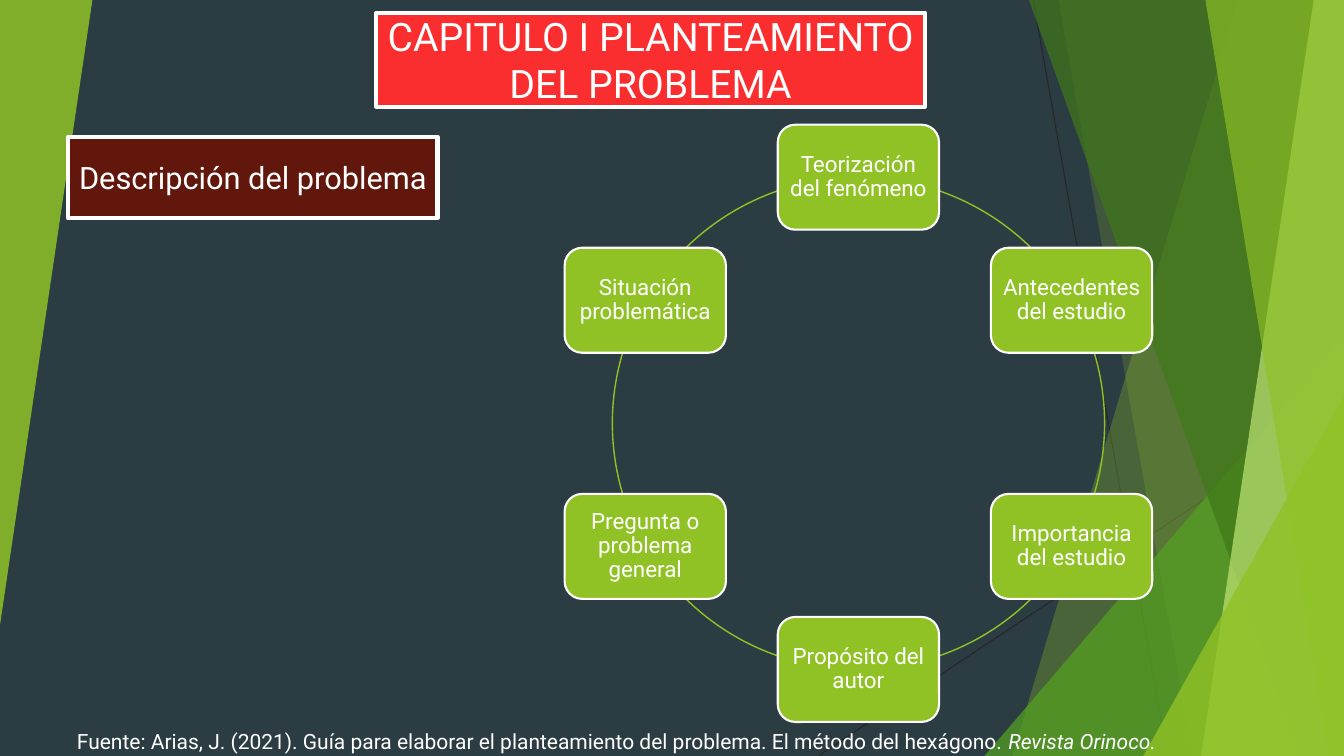
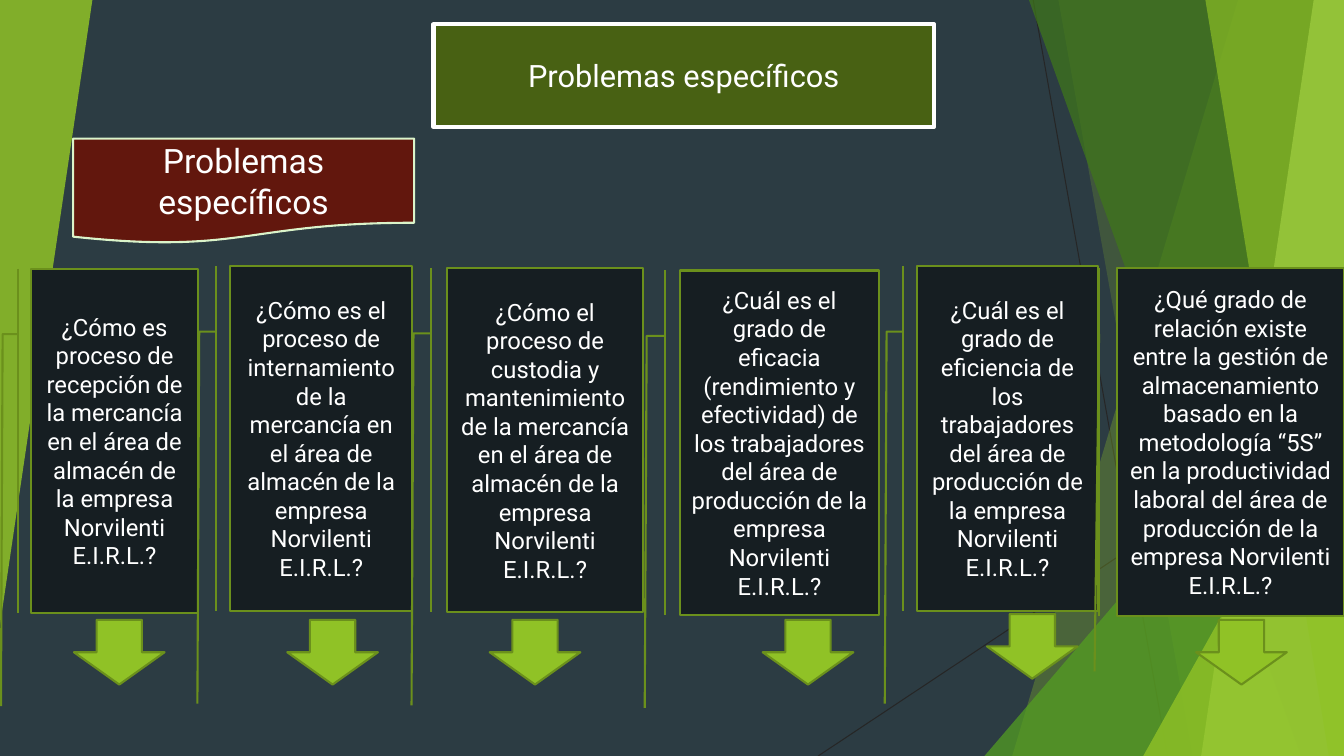
import dataclasses
import math

import lxml.etree
import pptx
import pptx.dml.color
import pptx.enum.shapes
import pptx.enum.text
import pptx.oxml.ns
import pptx.util

SHAPE = pptx.enum.shapes.MSO_SHAPE
COLUMNS, ROWS = 160, 90
CELL = pptx.util.Inches(1) // 12
TITLE_ONLY = 5
COMPANY = "Norvilenti E.I.R.L."


@dataclasses.dataclass(frozen=True)
class Theme:
    font: str = "Roboto"
    background: str = "2C3C43"
    white: str = "FFFFFF"
    lime: str = "90C226"
    green: str = "54A021"
    forest: str = "3F7819"
    pale_lime: str = "C0E474"
    hairline: str = "262626"
    red: str = "FA2E2E"
    maroon: str = "62170D"
    olive: str = "486113"
    mint: str = "DBF4CA"
    night: str = "161E22"
    moss: str = "6B901C"
    chapter_size: int = 28
    banner_size: int = 24
    heading_size: int = 22
    question_size: int = 17
    node_size: int = 16
    source_size: int = 15


THEME = Theme()


def cells(*counts):
    return [round(count * CELL) for count in counts]


def color(code):
    return pptx.dml.color.RGBColor.from_string(code)


def write(shape, *runs, size, spacing=None, margin=None, wrap=True):
    """Fill a shape with one centred paragraph; a run is (text, italic)."""
    frame = shape.text_frame
    frame.word_wrap = wrap
    frame.auto_size = pptx.enum.text.MSO_AUTO_SIZE.NONE
    frame.vertical_anchor = pptx.enum.text.MSO_ANCHOR.MIDDLE
    if margin is not None:
        frame.margin_left = frame.margin_right = pptx.util.Inches(margin)
        frame.margin_top = frame.margin_bottom = pptx.util.Inches(margin)
    para = frame.paragraphs[0]
    para.alignment = pptx.enum.text.PP_ALIGN.CENTER
    if spacing:
        para.line_spacing = spacing
    for text, italic in runs:
        span = para.add_run()
        span.text = text
        span.font.name = THEME.font
        span.font.size = pptx.util.Pt(size)
        span.font.italic = italic
        span.font.color.rgb = color(THEME.white)


class SlideMaker:
    """Draws on the current slide; lengths are counted in grid cells."""

    def __init__(self):
        self.deck = pptx.Presentation()
        self.deck.slide_width, self.deck.slide_height = cells(COLUMNS, ROWS)
        self.layout = self.deck.slide_layouts[TITLE_ONLY]
        background = self.deck.slide_master.background.fill
        background.solid()
        background.fore_color.rgb = color(THEME.background)
        self.slide = None

    def new_slide(self):
        self.slide = self.deck.slides.add_slide(self.layout)

    def paint(self, shape, fill=None, line=None, width=1.5, opacity=None):
        shape.shadow.inherit = False
        if fill:
            shape.fill.solid()
            shape.fill.fore_color.rgb = color(fill)
        else:
            shape.fill.background()
        if opacity:
            tint = shape.element.find(".//" + pptx.oxml.ns.qn("a:srgbClr"))
            alpha = lxml.etree.SubElement(tint, pptx.oxml.ns.qn("a:alpha"))
            alpha.set("val", str(opacity * 1000))
        if line:
            shape.line.color.rgb = color(line)
            shape.line.width = pptx.util.Pt(width)
        else:
            shape.line.fill.background()
        return shape

    def title(self, text, place, fill, size):
        title = self.slide.shapes.title
        title.left, title.top, title.width, title.height = cells(*place)
        self.paint(title, fill, THEME.white, width=3)
        write(title, (text, False), size=size)

    def shape(self, kind, place, **look):
        return self.paint(self.slide.shapes.add_shape(kind, *cells(*place)), **look)

    def triangle(self, place, fill, opacity, rotation=0):
        triangle = self.shape(SHAPE.ISOSCELES_TRIANGLE, place, fill=fill, opacity=opacity)
        triangle.adjustments[0] = 1
        triangle.rotation = rotation
        return triangle

    def shard(self, top, bottom, fill, opacity):
        """Draw a band from two left corners to the right slide edge."""
        builder = self.slide.shapes.build_freeform(*cells(top, 0))
        corners = [(COLUMNS, 0), (COLUMNS, ROWS), (bottom, ROWS)]
        builder.add_line_segments([cells(*corner) for corner in corners], close=True)
        return self.paint(builder.convert_to_shape(), fill, opacity=opacity)

    def hairline(self, *ends):
        line = self.slide.shapes.add_connector(
            pptx.enum.shapes.MSO_CONNECTOR.STRAIGHT, *cells(*ends))
        line.line.color.rgb = color(THEME.hairline)
        line.line.width = pptx.util.Pt(0.75)
        properties = line.element.find(pptx.oxml.ns.qn("p:spPr"))
        lxml.etree.SubElement(properties, pptx.oxml.ns.qn("a:effectLst"))
        return line

    def caption(self, place, *runs, size):
        box = self.slide.shapes.add_textbox(*cells(*place))
        write(box, *runs, size=size, wrap=False)

    def cycle(self, labels, center, radius, size):
        """Place labelled boxes clockwise from the top of a ring."""
        (x, y), (width, height) = center, size
        self.shape(SHAPE.OVAL, (x - radius, y - radius, 2 * radius, 2 * radius),
                   line=THEME.lime, width=1)
        for index, label in enumerate(labels):
            angle = math.tau * index / len(labels)
            left = x + radius * math.sin(angle) - width / 2
            top = y - radius * math.cos(angle) - height / 2
            node = self.shape(SHAPE.ROUNDED_RECTANGLE, (left, top, width, height),
                              fill=THEME.lime, line=THEME.white)
            write(node, (label, False), size=THEME.node_size, spacing=0.9, margin=0.04)

    def callout(self, text, place, leader):
        callout = self.shape(SHAPE.LINE_CALLOUT_2_BORDER_AND_ACCENT_BAR, place,
                             fill=THEME.night, line=THEME.moss)
        for index, value in enumerate(leader):
            callout.adjustments[index] = value
        write(callout, (text, False), size=THEME.question_size)

    def backdrop(self):
        """Draw the shared decoration and move it to the layout."""
        pieces = [
            self.hairline(123, 0, 139, ROWS),
            self.hairline(COLUMNS, 48.4, 97.4, ROWS),
            self.shard(147.4, 120.5, THEME.lime, 30),
            self.shard(126, 142, THEME.lime, 20),
            self.triangle((117.2, 40, 42.8, 50), THEME.green, 72),
            self.shard(122.5, 154.9, THEME.forest, 70),
            self.shard(156.4, 143, THEME.pale_lime, 70),
            self.shard(143.5, 158.2, THEME.lime, 65),
            self.triangle((136.1, 47.2, 23.9, 42.8), THEME.lime, 80),
            self.triangle((0, 0, 11, 74.4), THEME.lime, 85, rotation=180),
        ]
        for index, piece in enumerate(pieces):
            piece.element.xpath(".//p:cNvPr")[0].set("id", str(100 + index))
            self.layout.shapes.element.insert(2 + index, piece.element)


def problem_statement(maker):
    maker.title("CAPITULO I PLANTEAMIENTO DEL PROBLEMA", (44.8, 1.5, 65.3, 11.2),
                THEME.red, THEME.chapter_size)
    heading = maker.shape(SHAPE.RECTANGLE, (8.1, 16.3, 44, 9.7),
                          fill=THEME.maroon, line=THEME.white, width=3)
    write(heading, ("Descripción del problema", False), size=THEME.heading_size)
    maker.cycle(
        ["Teorización del fenómeno", "Antecedentes del estudio",
         "Importancia del estudio", "Propósito del autor",
         "Pregunta o problema general", "Situación problemática"],
        center=(102.2, 50.4), radius=29.3, size=(19.2, 12.5))
    maker.caption(
        (4.5, 86.1, 137.8, 4.2),
        ("Fuente: Arias, J. (2021). Guía para elaborar el planteamiento del problema. "
         "El método del hexágono. ", False),
        ("Revista Orinoco.", True), size=THEME.source_size)


def specific_problems(maker):
    maker.title("Problemas específicos", (51.6, 2.9, 59.6, 12.2),
                THEME.olive, THEME.heading_size)
    banner = maker.shape(SHAPE.FLOWCHART_DOCUMENT, (8.7, 16.5, 40.6, 12.5),
                         fill=THEME.maroon, line=THEME.mint)
    write(banner, ("Problemas específicos", False), size=THEME.banner_size)

    store = f"en el área de almacén de la empresa {COMPANY}?"
    plant = f"del área de producción de la empresa {COMPANY}?"
    wide_leader = (0.19, -0.08, 0.19, -0.17, 1.27, -0.18)
    narrow_leader = (0.19, -0.08, 0.19, -0.08, 1.16, -0.1)
    # question, callout place, leader, arrow left, arrow top
    questions = [
        (f"¿Cómo es proceso de recepción de la mercancía {store}",
         (3.7, 32, 19.9, 41), wide_leader, 8.8, 73.8),
        (f"¿Cómo es el proceso de internamiento de la mercancía {store}",
         (27.4, 31.7, 21.7, 41), wide_leader, 34.2, 73.8),
        (f"¿Cómo el proceso de custodia y mantenimiento de la mercancía {store}",
         (53.2, 31.9, 23.4, 41), wide_leader, 58.3, 73.8),
        ("¿Cuál es el grado de eficacia (rendimiento y efectividad) "
         f"de los trabajadores {plant}",
         (81, 32.2, 23.6, 41), wide_leader, 90.8, 73.8),
        (f"¿Cuál es el grado de eficiencia de los trabajadores {plant}",
         (109.2, 31.7, 21.5, 41), wide_leader, 117.5, 73.1),
        ("¿Qué grado de relación existe entre la gestión de almacenamiento basado "
         f"en la metodología “5S” en la productividad laboral {plant}",
         (133, 31.9, 27, 41.4), narrow_leader, 142.4, 73.8),
    ]
    for text, place, leader, arrow_left, arrow_top in questions:
        maker.callout(text, place, leader)
        maker.shape(SHAPE.DOWN_ARROW, (arrow_left, arrow_top, 10.8, 7.7),
                    fill=THEME.lime, line=THEME.moss)


def main():
    maker = SlideMaker()
    maker.new_slide()
    maker.backdrop()
    problem_statement(maker)
    maker.new_slide()
    specific_problems(maker)
    maker.deck.save("out.pptx")


if __name__ == "__main__":
    main()
